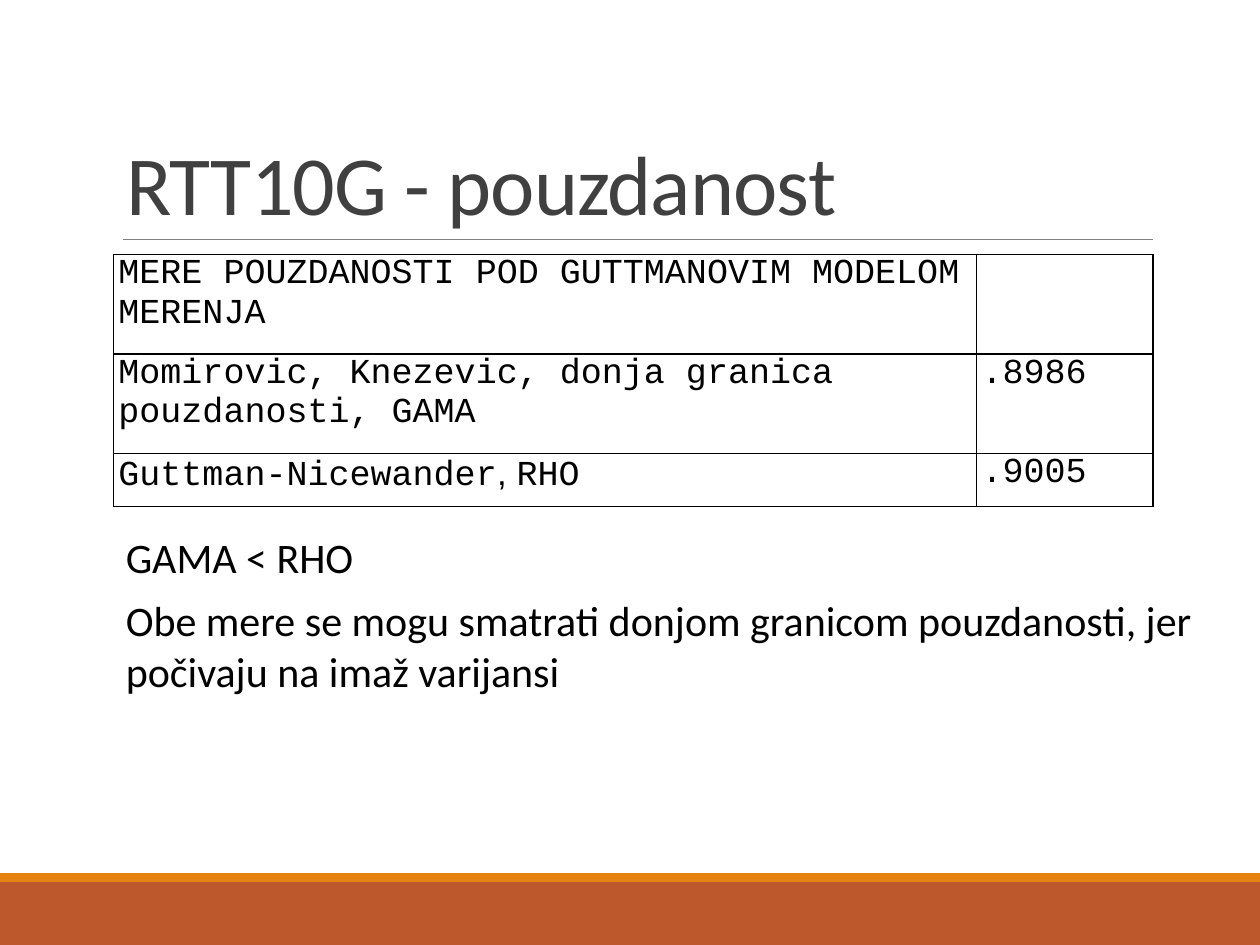
from lxml import etree
from pptx import Presentation
from pptx.dml.color import RGBColor
from pptx.enum.shapes import MSO_CONNECTOR, MSO_SHAPE
from pptx.enum.text import MSO_ANCHOR, MSO_AUTO_SIZE, PP_ALIGN
from pptx.oxml import parse_xml
from pptx.oxml.ns import nsdecls, qn
from pptx.util import Inches, Pt

RECTANGLE = MSO_SHAPE.RECTANGLE
STRAIGHT = MSO_CONNECTOR.STRAIGHT
BOTTOM = MSO_ANCHOR.BOTTOM
NO_AUTOSIZE = MSO_AUTO_SIZE.NONE
GROW = MSO_AUTO_SIZE.SHAPE_TO_FIT_TEXT
LEFT = PP_ALIGN.LEFT

RUST = RGBColor(0xBD, 0x58, 0x2C)
ORANGE = RGBColor(0xE4, 0x83, 0x12)
GRAY = RGBColor(0x80, 0x80, 0x80)
DARK_GRAY = RGBColor(0x40, 0x40, 0x40)
BLACK = RGBColor(0, 0, 0)


def format_run(run, font_name, size, color=BLACK):
    run.font.name = font_name
    run.font.size = Pt(size)
    run.font.color.rgb = color


prs = Presentation()
prs.slide_width = Inches(10)
prs.slide_height = Inches(7.5)
slide = prs.slides.add_slide(prs.slide_layouts[5])

for top, height, color in [(7, 0.5, RUST), (6.93, 0.07, ORANGE)]:
    band = slide.shapes.add_shape(
        RECTANGLE, Inches(0), Inches(top), Inches(10), Inches(height))
    band.shadow.inherit = False
    band.fill.solid()
    band.fill.fore_color.rgb = color
    band.line.fill.background()

title_rule = slide.shapes.add_connector(
    STRAIGHT, Inches(0.98), Inches(1.9), Inches(9.15), Inches(1.9))
title_rule.line.color.rgb = GRAY
title_rule.line.width = Pt(0.5)
etree.SubElement(title_rule._element.spPr, qn("a:effectLst"))

title = slide.shapes.title
title.left, title.top = Inches(0.9), Inches(0.31)
title.width, title.height = Inches(8.25), Inches(1.59)
title.text_frame.text = "RTT10G - pouzdanost"
title.text_frame.auto_size = NO_AUTOSIZE
title.text_frame.vertical_anchor = BOTTOM
heading = title.text_frame.paragraphs[0]
heading.alignment = LEFT
heading.line_spacing = 0.85
format_run(heading.runs[0], "Calibri", 48, DARK_GRAY)
heading.runs[0].font._element.set("spc", "-50")

MEASURES = [
    (["MERE POUZDANOSTI POD GUTTMANOVIM MODELOM MERENJA"], []),
    (["Momirovic, Knezevic, donja granica pouzdanosti, GAMA"], [".8986"]),
    (["Guttman-Nicewander", ", ", "RHO"], [".9005"]),
]
reliability = slide.shapes.add_table(
    3, 2, Inches(0.9), Inches(2.02), Inches(8.25), Inches(2)).table
reliability.first_row = False
reliability.horz_banding = False
for column, width in zip(reliability.columns, [6.85, 1.4]):
    column.width = Inches(width)
for row, height, measure in zip(reliability.rows, [0.79, 0.79, 0.42], MEASURES):
    row.height = Inches(height)
    for cell, parts in zip(row.cells, measure):
        cell.margin_left = cell.margin_right = Inches(0.04)
        cell.margin_top = cell.margin_bottom = 0
        for part in parts:
            run = cell.text_frame.paragraphs[0].add_run()
            run.text = part
            format_run(run, "Arial" if part == ", " else "Courier New", 20)
        cell_properties = cell._tc.get_or_add_tcPr()
        for side in ("lnL", "lnR", "lnT", "lnB"):
            cell_properties.append(parse_xml(
                f'<a:{side} {nsdecls("a")} w="{Pt(1)}"><a:solidFill>'
                f'<a:srgbClr val="{BLACK}"/></a:solidFill></a:{side}>'))
        cell.fill.background()

CONCLUSIONS = [
    ("GAMA < RHO", 4.17, 2.03, 0.5, False),
    ("Obe mere se mogu smatrati donjom granicom pouzdanosti, jer "
     "počivaju na imaž varijansi", 4.67, 9, 0.91, True),
]
for text, top, width, height, wrap in CONCLUSIONS:
    conclusion = slide.shapes.add_textbox(
        Inches(0.9), Inches(top), Inches(width), Inches(height)).text_frame
    conclusion.word_wrap = wrap
    conclusion.auto_size = GROW
    conclusion.text = text
    format_run(conclusion.paragraphs[0].runs[0], "Calibri", 24)

prs.save("out.pptx")
